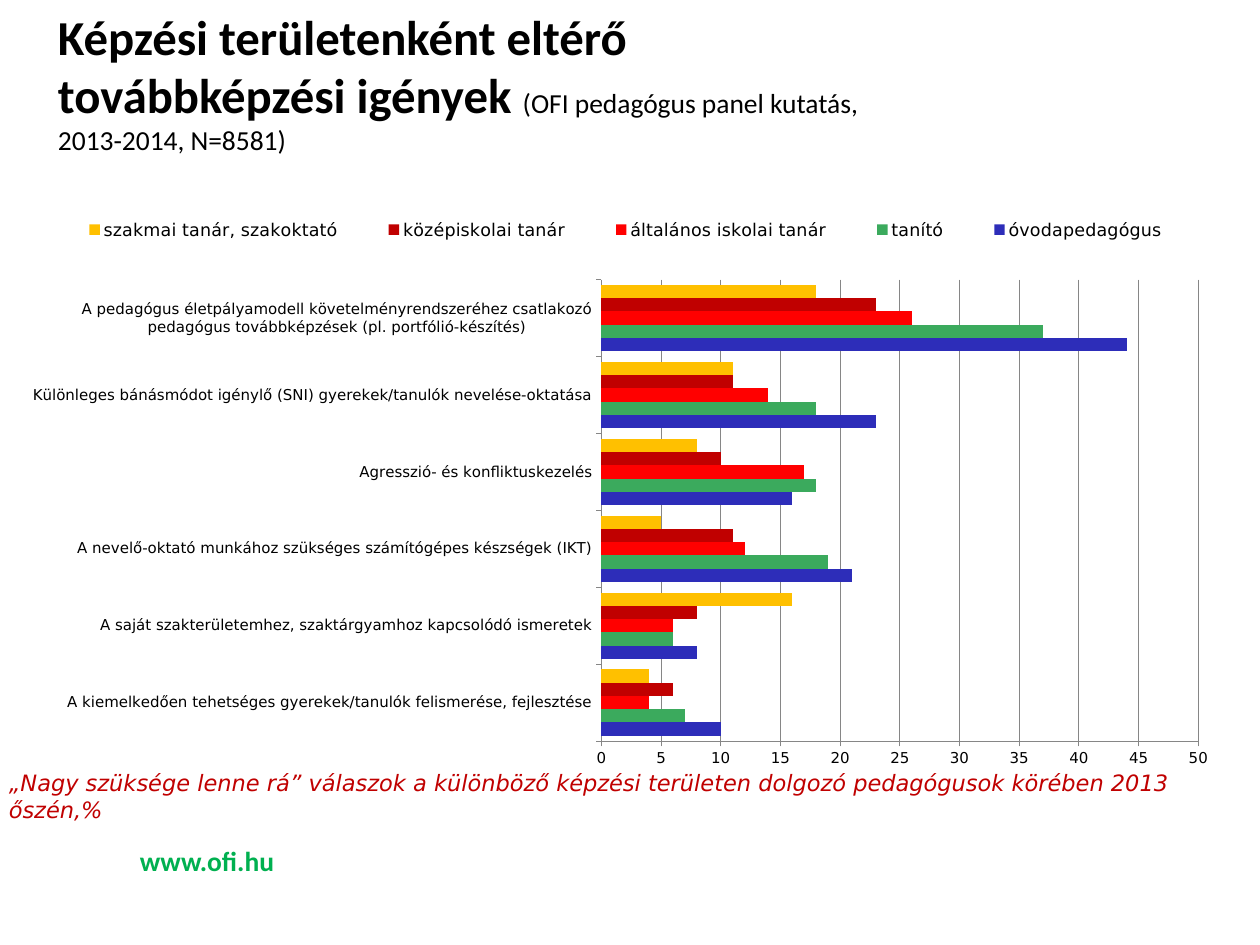
from lxml.etree import SubElement
from pptx import Presentation
from pptx.chart.data import CategoryChartData
from pptx.dml.color import RGBColor
from pptx.enum.chart import XL_CHART_TYPE as ChartType, XL_LEGEND_POSITION as LegendPosition
from pptx.enum.chart import XL_TICK_MARK as TickMark
from pptx.enum.text import MSO_ANCHOR as Anchor, MSO_AUTO_SIZE as AutoSize, PP_ALIGN as Align
from pptx.oxml.ns import qn
from pptx.util import Inches, Pt

WIDTH, HEIGHT = 14, 10.5
COLORS = {
    "text": "000000", "grid": "868686", "site": "00B050", "note": "C00000",
    "kindergarten": "2D2DB9", "primary": "3BAA5D", "lower": "FF0000",
    "secondary": "C00000", "vocational": "FFC000",
}
FORMATS = {
    "title": {"size": Pt(39), "name": "Calibri", "bold": True},
    "source": {"size": Pt(22), "name": "Calibri", "bold": False},
    "site": {"size": Pt(22), "name": "Calibri", "bold": True},
    "note": {"size": Pt(18), "name": "DejaVu Sans", "italic": True},
    "axis": {"size": Pt(12), "name": "DejaVu Sans"},
    "legend": {"size": Pt(14), "name": "DejaVu Sans"},
}
TOPICS = [
    "A kiemelkedően tehetséges gyerekek/tanulók felismerése, fejlesztése",
    "A saját szakterületemhez, szaktárgyamhoz kapcsolódó ismeretek",
    "A nevelő-oktató munkához szükséges számítógépes készségek (IKT)",
    "Agresszió- és konfliktuskezelés",
    "Különleges bánásmódot igénylő (SNI) gyerekek/tanulók nevelése-oktatása",
    "A pedagógus életpályamodell követelményrendszeréhez csatlakozó "
    "pedagógus továbbképzések (pl. portfólió-készítés)",
]
TEACHERS = [
    ("óvodapedagógus", "kindergarten", [10, 8, 21, 16, 23, 44]),
    ("tanító", "primary", [7, 6, 19, 18, 18, 37]),
    ("általános iskolai tanár", "lower", [4, 6, 12, 17, 14, 26]),
    ("középiskolai tanár", "secondary", [6, 8, 11, 10, 11, 23]),
    ("szakmai tanár, szakoktató", "vocational", [4, 16, 5, 8, 11, 18]),
]


def area(left, top, width, height):
    """Turn shares of the slide's size into a position and a size."""
    return (Inches(WIDTH * left), Inches(HEIGHT * top),
            Inches(WIDTH * width), Inches(HEIGHT * height))


def style_font(font, style, color="text"):
    for attribute, value in FORMATS[style].items():
        setattr(font, attribute, value)
    font.color.rgb = RGBColor.from_string(COLORS[color])


def set_frame(frame, padding):
    options = {
        "word_wrap": True, "auto_size": AutoSize.NONE, "vertical_anchor": Anchor.TOP,
        "margin_left": Inches(0.14), "margin_right": Inches(0.14),
        "margin_top": Inches(padding), "margin_bottom": Inches(padding),
    }
    for attribute, value in options.items():
        setattr(frame, attribute, value)


def add_run(paragraph, text, style, color="text"):
    run = paragraph.add_run()
    run.text = text
    style_font(run.font, style, color)


def add_title(slide):
    title = slide.shapes.title
    title.left, title.top, title.width, title.height = area(0.036, 0, 0.685, 0.126)
    set_frame(title.text_frame, 0.07)
    paragraph = title.text_frame.paragraphs[0]
    paragraph.alignment = Align.LEFT
    add_run(paragraph, "Képzési területenként eltérő továbbképzési igények ", "title")
    add_run(paragraph, "(OFI pedagógus panel kutatás, 2013-2014, N=8581)", "source")


def add_label(slide, place, text, style, padding):
    frame = slide.shapes.add_textbox(*area(*place)).text_frame
    set_frame(frame, padding)
    add_run(frame.paragraphs[0], text, style, style)


def set_layout(element, position, *followers, inner=False):
    """Fix a chart part at shares of the chart's size, ahead of its followers."""
    for old in element.findall(qn("c:layout")):
        element.remove(old)
    layout = SubElement(element, qn("c:layout"))
    for follower in followers:
        found = element.find(qn(follower))
        if found is not None:
            found.addprevious(layout)
            break
    manual = SubElement(layout, qn("c:manualLayout"))
    values = [("layoutTarget", "inner")] if inner else []
    values += [("xMode", "edge"), ("yMode", "edge")]
    values += zip("xywh", position)
    for tag, value in values:
        SubElement(manual, qn(f"c:{tag}")).set("val", str(value))


def style_axis(axis):
    axis.major_tick_mark = TickMark.OUTSIDE
    axis.minor_tick_mark = TickMark.NONE
    style_font(axis.tick_labels.font, "axis")
    axis.format.line.color.rgb = RGBColor.from_string(COLORS["grid"])


def add_needs_chart(slide):
    data = CategoryChartData()
    data.categories = TOPICS
    for name, _, shares in TEACHERS:
        data.add_series(name, shares)
    place = area(0.016, 0.199, 0.961, 0.63)
    chart = slide.shapes.add_chart(ChartType.BAR_CLUSTERED, *place, data).chart
    chart.has_title = False
    style_font(chart.font, "axis")

    plot = chart.plots[0]
    plot.gap_width, plot.overlap, plot.vary_by_categories = 80, 0, False
    for series, (_, color, _) in zip(plot.series, TEACHERS):
        series.format.fill.solid()
        series.format.fill.fore_color.rgb = RGBColor.from_string(COLORS[color])

    style_axis(chart.category_axis)
    scale = chart.value_axis
    style_axis(scale)
    scale.minimum_scale, scale.maximum_scale, scale.major_unit = 0, 50, 5
    scale.has_major_gridlines = True
    scale.major_gridlines.format.line.color.rgb = RGBColor.from_string(COLORS["grid"])

    chart.has_legend = True
    legend = chart.legend
    legend.position, legend.include_in_layout = LegendPosition.TOP, False
    style_font(legend.font, "legend")
    legend_element = chart._chartSpace.find(".//" + qn("c:legend"))
    set_layout(legend_element, (0.02, 0.03, 0.96, 0.08), "c:overlay", "c:txPr")
    plot_area = chart._chartSpace.find(".//" + qn("c:plotArea"))
    set_layout(plot_area, (0.48, 0.154, 0.493, 0.775), "c:barChart", inner=True)


def main():
    deck = Presentation()
    deck.slide_width, deck.slide_height = Inches(WIDTH), Inches(HEIGHT)
    slide = deck.slides.add_slide(deck.slide_layouts[5])
    add_label(slide, (0.101, 0.886, 0.32, 0.05), "www.ofi.hu", "site", 0.07)
    add_title(slide)
    add_needs_chart(slide)
    add_label(slide, (-0.003, 0.814, 1, 0.058),
              "„Nagy szüksége lenne rá” válaszok a különböző képzési területen "
              "dolgozó pedagógusok körében 2013 őszén,%", "note", 0)
    deck.save("out.pptx")


if __name__ == "__main__":
    main()
